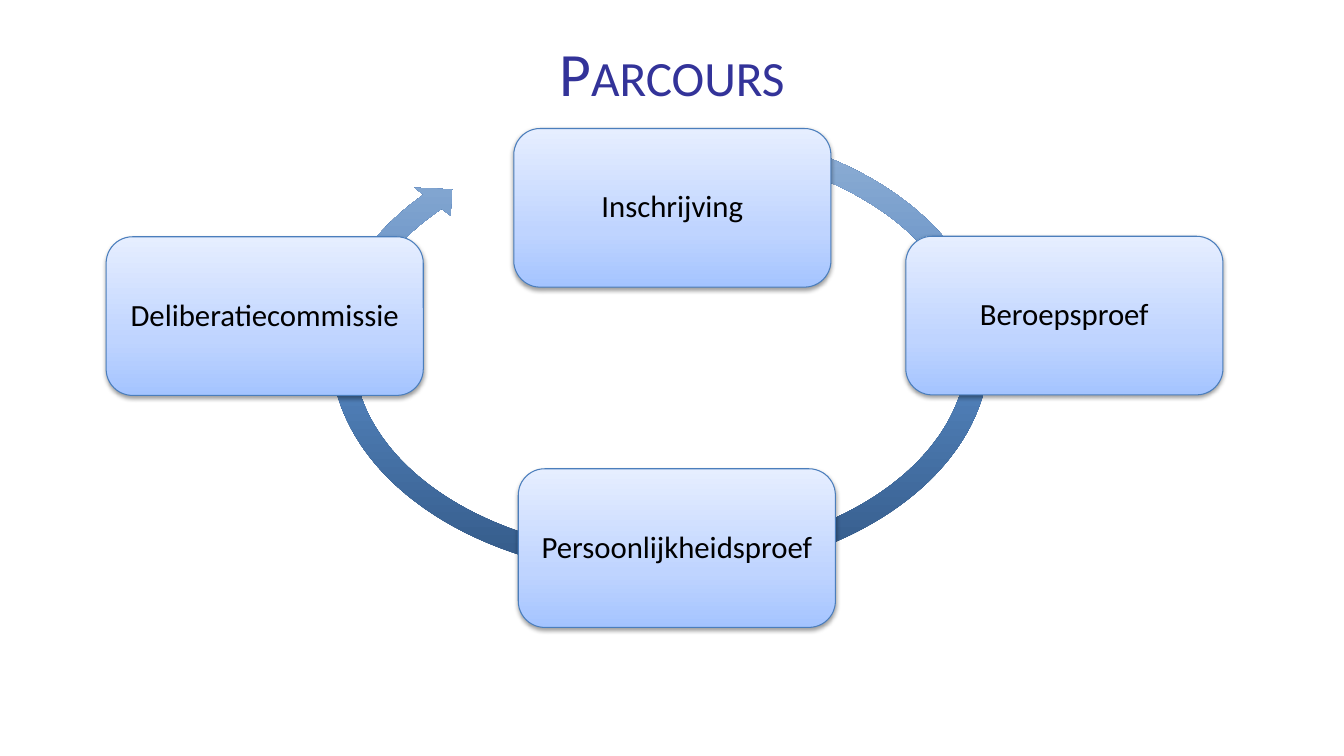
from lxml.etree import SubElement
from pptx import Presentation
from pptx.dml.color import RGBColor
from pptx.enum.shapes import MSO_SHAPE as Shape
from pptx.enum.text import MSO_ANCHOR as Anchor, PP_ALIGN as Align
from pptx.oxml.ns import qn
from pptx.util import Emu, Inches, Pt

WIDTH, HEIGHT = Inches(13.333), Inches(7.5)
FONT = "Calibri"
COLORS = {"title": "333399", "text": "000000", "outline": "4B7EBC", "shadow": "000000"}
ARROW_STOPS = [(0, "315683"), (48, "5485BF"), (100, "95B3D7")]
STEP_STOPS = [(0, "A4C4FF"), (35, "BFD4FF"), (100, "E6EEFF")]

# Steps of the cycle: label, left and top as shares of the cycle's box
STEP_SIZE = (0.284, 0.318)
STEPS = [
    ("Inschrijving", 0.365, 0),
    ("Beroepsproef", 0.716, 0.216),
    ("Persoonlijkheidsproef", 0.369, 0.682),
    ("Deliberatiecommissie", 0, 0.217),
]


def share(box, left, top, width, height):
    """Return the part of a box given by shares of its size."""
    x, y, w, h = box
    return (Emu(int(x + left * w)), Emu(int(y + top * h)),
            Emu(int(width * w)), Emu(int(height * h)))


def fill_gradient(shape, stops):
    """Fill a shape with a gradient that runs from bottom to top."""
    shape.fill.gradient()
    shape.fill.gradient_angle = 90
    stop_list = shape._element.spPr.find(".//" + qn("a:gsLst"))
    for stop in list(stop_list):
        stop_list.remove(stop)
    for position, color in stops:
        stop = SubElement(stop_list, qn("a:gs"), pos=str(position * 1000))
        SubElement(stop, qn("a:srgbClr"), val=color)


def add_shadow(shape):
    """Give a shape a soft shadow below it."""
    shape.shadow.inherit = False
    effects = shape._element.spPr.find(qn("a:effectLst"))
    shadow = SubElement(effects, qn("a:outerShdw"), blurRad=str(Pt(3.1)),
                        dist=str(Pt(1.6)), dir="5400000", rotWithShape="0")
    color = SubElement(shadow, qn("a:srgbClr"), val=COLORS["shadow"])
    SubElement(color, qn("a:alpha"), val="38000")


def write(frame, text, size, color):
    """Write one centred paragraph and return its run."""
    frame.word_wrap = True
    para = frame.paragraphs[0]
    para.alignment = Align.CENTER
    para.font.name, para.font.size = FONT, Pt(size)
    para.font.color.rgb = RGBColor.from_string(COLORS[color])
    span = para.add_run()
    span.text = text
    return span


def add_title(page, box, text):
    frame = page.shapes.add_textbox(*box).text_frame
    frame.vertical_anchor = Anchor.TOP
    span = write(frame, text, 44, "title")
    span.font._element.set("cap", "small")


def add_step(page, box, label):
    step = page.shapes.add_shape(Shape.ROUNDED_RECTANGLE, *box)
    fill_gradient(step, STEP_STOPS)
    step.line.color.rgb = RGBColor.from_string(COLORS["outline"])
    step.line.width = Pt(0.75)
    add_shadow(step)
    frame = step.text_frame
    frame.margin_left = frame.margin_right = Inches(0.09)
    frame.margin_top = frame.margin_bottom = Inches(0.09)
    frame.vertical_anchor = Anchor.MIDDLE
    write(frame, label, 22, "text")
    frame.paragraphs[0].line_spacing = 0.9


def add_cycle(page, box):
    # Ring with an arrowhead, behind the steps
    ring = page.shapes.add_shape(Shape.CIRCULAR_ARROW, *share(box, 0.191, -0.028, 0.61, 0.949))
    for index, value in enumerate([0.047, 2.73, 127.99, 180.53, 0.048]):
        ring.adjustments[index] = value
    fill_gradient(ring, ARROW_STOPS)
    ring.line.fill.background()
    ring.shadow.inherit = False

    # Steps
    for label, left, top in STEPS:
        add_step(page, share(box, left, top, *STEP_SIZE), label)


def main():
    deck = Presentation()
    deck.slide_width, deck.slide_height = WIDTH, HEIGHT
    page = deck.slides.add_slide(deck.slide_layouts[6])
    slide_box = (0, 0, WIDTH, HEIGHT)
    add_title(page, share(slide_box, 0.05, 0.04, 0.9, 0.167), "Parcours")
    add_cycle(page, share(slide_box, 0.079, 0.17, 0.831, 0.66))
    deck.save("out.pptx")


if __name__ == "__main__":
    main()
